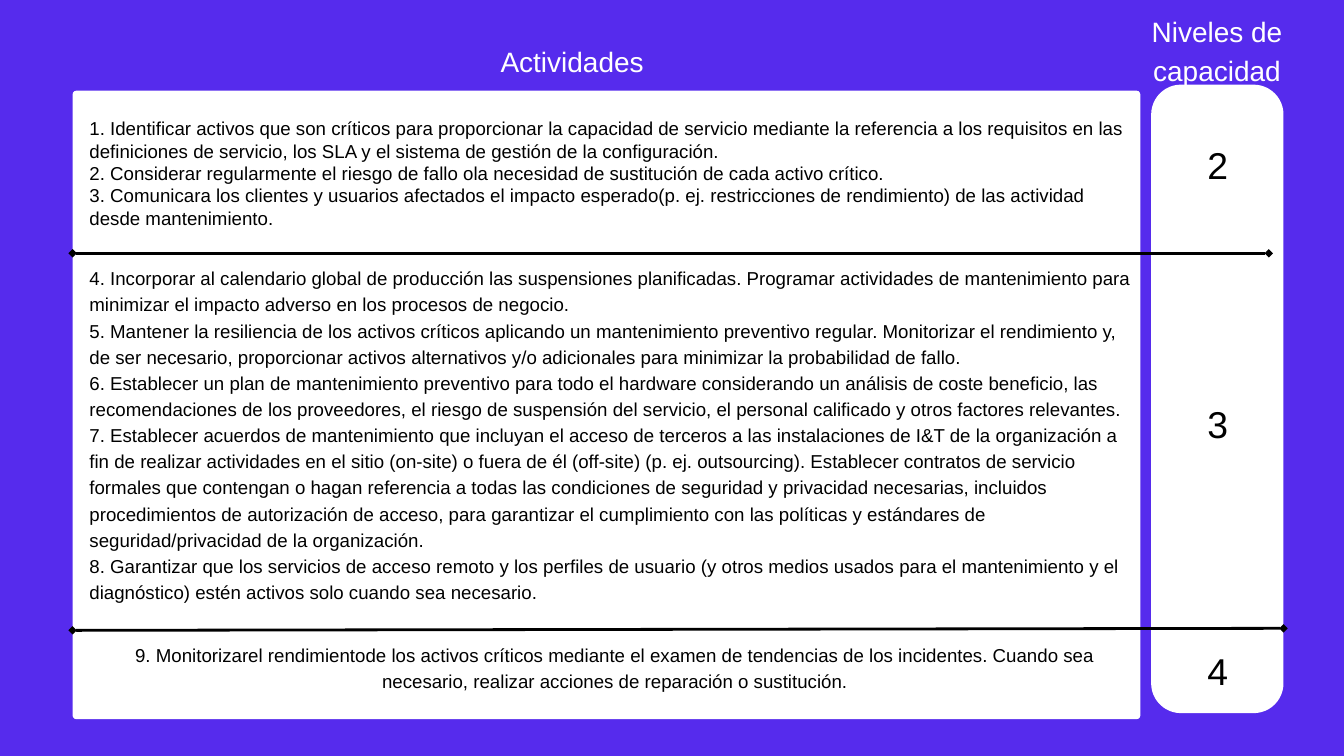
from pptx import Presentation
from pptx.dml.color import RGBColor
from pptx.enum.shapes import MSO_CONNECTOR, MSO_SHAPE
from pptx.enum.text import MSO_ANCHOR, MSO_AUTO_SIZE, PP_ALIGN
from pptx.oxml.ns import qn
from pptx.util import Pt
from lxml.etree import SubElement

COLORS = {"background": "562BED", "panel": "FFFFFF", "heading": "FFFFFF", "ink": "000000"}
FONT = "Arial"

# Content: headings, then one band per capability level
ACTIVITIES_HEADING = "Actividades"
LEVELS_HEADING = "Niveles de capacidad"
BANDS = [
    {"level": "2", "top": 125.3, "height": 147.6, "spacing": 24, "align": PP_ALIGN.LEFT,
     "level_top": 144.7, "activities": [
        "1. Identificar activos que son críticos para proporcionar la capacidad de servicio mediante la referencia a los requisitos en las definiciones de servicio, los SLA y el sistema de gestión de la configuración.",
        "2. Considerar regularmente el riesgo de fallo ola necesidad de sustitución de cada activo crítico.",
        "3. Comunicara los clientes y usuarios afectados el impacto esperado(p. ej. restricciones de rendimiento) de las actividad desde mantenimiento.",
     ]},
    {"level": "3", "top": 282.2, "height": 391, "spacing": 28, "align": PP_ALIGN.LEFT,
     "level_top": 421.9, "activities": [
        "4. Incorporar al calendario global de producción las suspensiones planificadas. Programar actividades de mantenimiento para minimizar el impacto adverso en los procesos de negocio.",
        "5. Mantener la resiliencia de los activos críticos aplicando un mantenimiento preventivo regular. Monitorizar el rendimiento y, de ser necesario, proporcionar activos alternativos y/o adicionales para minimizar la probabilidad de fallo.",
        "6. Establecer un plan de mantenimiento preventivo para todo el hardware considerando un análisis de coste beneficio, las recomendaciones de los proveedores, el riesgo de suspensión del servicio, el personal calificado y otros factores relevantes.",
        "7. Establecer acuerdos de mantenimiento que incluyan el acceso de terceros a las instalaciones de I&T de la organización a fin de realizar actividades en el sitio (on-site) o fuera de él (off-site) (p. ej. outsourcing). Establecer contratos de servicio formales que contengan o hagan referencia a todas las condiciones de seguridad y privacidad necesarias, incluidos procedimientos de autorización de acceso, para garantizar el cumplimiento con las políticas y estándares de seguridad/privacidad de la organización.",
        "8. Garantizar que los servicios de acceso remoto y los perfiles de usuario (y otros medios usados para el mantenimiento y el diagnóstico) estén activos solo cuando sea necesario.",
     ]},
    {"level": "4", "top": 685.4, "height": 58.3, "spacing": 28, "align": PP_ALIGN.CENTER,
     "level_top": 686.9, "activities": [
        "9. Monitorizarel rendimientode los activos críticos mediante el examen de tendencias de los incidentes. Cuando sea necesario, realizar acciones de reparación o sustitución.",
     ]},
]

# Geometry: left, top, width, height, corner radius
PANELS = [(77.8, 97.2, 1144, 673.4, 4), (1233.4, 90.7, 141.8, 673.4, 32)]
DIVIDERS = [(77.8, 271.4, 1359.4, 271.4), (77.8, 675.4, 1375.2, 673.2)]
TEXT_LEFT, TEXT_WIDTH = 95.8, 1126
LEVEL_LEFT, LEVEL_WIDTH, LEVEL_HEIGHT = 1198.8, 211.7, 60


def rgb(name):
    return RGBColor.from_string(COLORS[name])


def write(sp, paragraphs, box, size=20, spacing=28, color="ink", align=PP_ALIGN.CENTER):
    """Place a text shape and fill it with formatted paragraphs."""
    sp.left, sp.top, sp.width, sp.height = map(Pt, box)
    tf = sp.text_frame
    tf.word_wrap = True
    tf.auto_size = MSO_AUTO_SIZE.NONE
    tf.vertical_anchor = MSO_ANCHOR.TOP
    tf.margin_left = tf.margin_top = tf.margin_right = tf.margin_bottom = 0
    for i, text in enumerate(paragraphs):
        p = tf.add_paragraph() if i else tf.paragraphs[0]
        p.alignment = align
        p.line_spacing = Pt(spacing)
        p.space_before = p.space_after = Pt(0)
        r = p.add_run()
        r.text = text
        r.font.name = FONT
        r.font.size = Pt(size)
        r.font.color.rgb = rgb(color)


def add_text(s, paragraphs, box, **fmt):
    write(s.shapes.add_textbox(*map(Pt, box)), paragraphs, box, **fmt)


def add_panel(s, left, top, width, height, radius):
    sp = s.shapes.add_shape(MSO_SHAPE.ROUNDED_RECTANGLE, *map(Pt, (left, top, width, height)))
    sp.adjustments[0] = radius / min(width, height)
    sp.shadow.inherit = False
    sp.fill.solid()
    sp.fill.fore_color.rgb = rgb("panel")
    sp.line.fill.background()


def add_divider(s, ends):
    line = s.shapes.add_connector(MSO_CONNECTOR.STRAIGHT, *map(Pt, ends))
    line.line.color.rgb = rgb("ink")
    line.line.width = Pt(3)
    ln = line.line._get_or_add_ln()
    for tag in ("a:headEnd", "a:tailEnd"):
        SubElement(ln, qn(tag), type="diamond")
    SubElement(line._element.spPr, qn("a:effectLst"))


def main():
    prs = Presentation()
    prs.slide_width, prs.slide_height = Pt(1440), Pt(810)
    s = prs.slides.add_slide(prs.slide_layouts[5])
    s.background.fill.solid()
    s.background.fill.fore_color.rgb = rgb("background")

    # White panels
    for panel in PANELS:
        add_panel(s, *panel)

    # Headings
    heading = {"size": 30, "spacing": 42, "color": "heading"}
    write(s.shapes.title, [ACTIVITIES_HEADING], (530.6, 41.8, 164.9, 39.6), **heading)
    add_text(s, [LEVELS_HEADING], (1187.3, 9.4, 233.3, 81.4), **heading)

    # Activities and their capability level
    for band in BANDS:
        add_text(s, band["activities"], (TEXT_LEFT, band["top"], TEXT_WIDTH, band["height"]),
                 spacing=band["spacing"], align=band["align"])
        add_text(s, [band["level"]], (LEVEL_LEFT, band["level_top"], LEVEL_WIDTH, LEVEL_HEIGHT),
                 size=40, spacing=56)

    # Dividers between bands
    for ends in DIVIDERS:
        add_divider(s, ends)

    prs.save("out.pptx")


if __name__ == "__main__":
    main()
